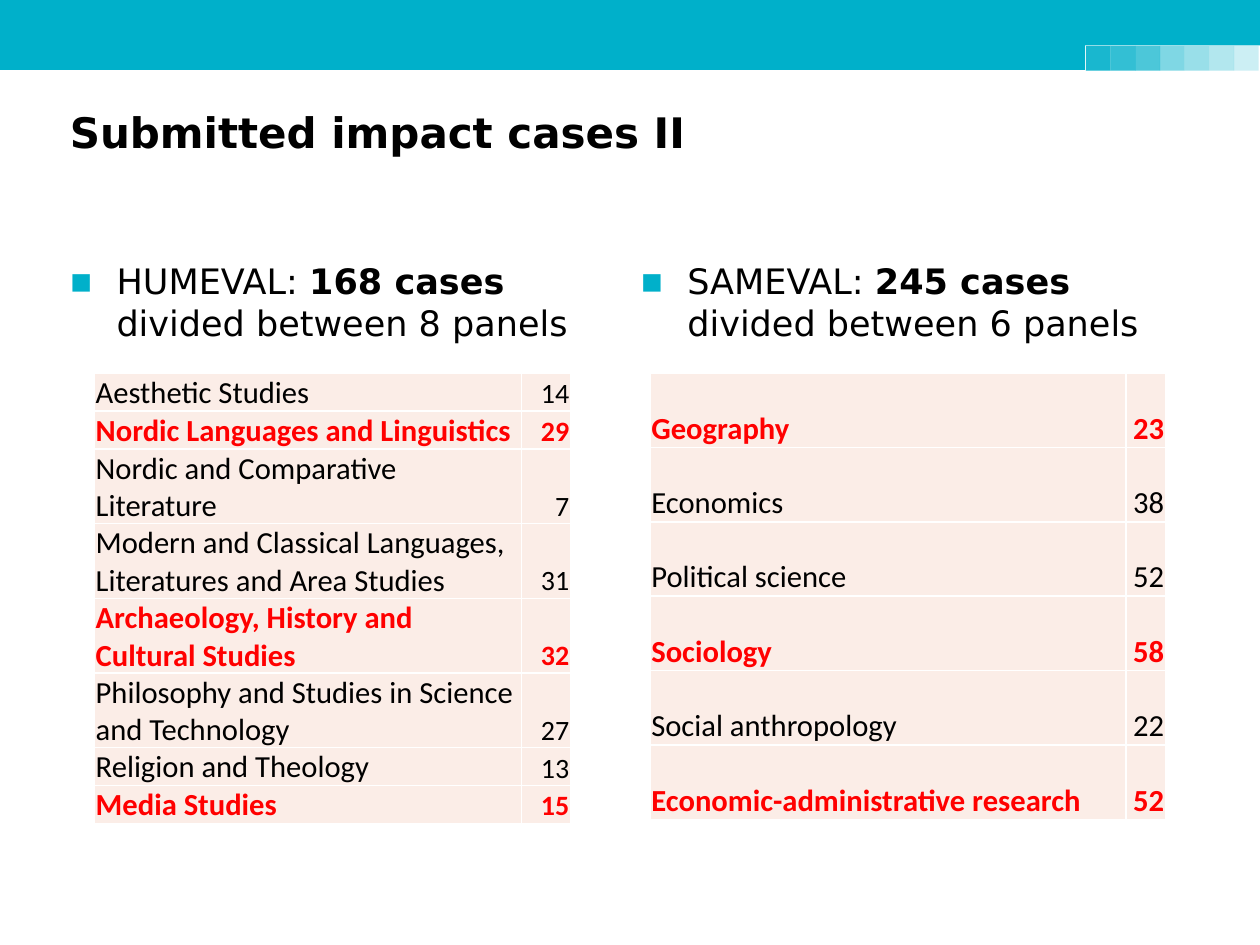
"""Build the slide on submitted impact cases, with one table per evaluation."""
from dataclasses import dataclass

from lxml.etree import SubElement
from pptx import Presentation
from pptx.dml.color import RGBColor
from pptx.enum.shapes import MSO_SHAPE
from pptx.enum.text import MSO_ANCHOR, PP_ALIGN
from pptx.oxml.ns import qn
from pptx.util import Pt


@dataclass(frozen=True)
class Theme:
    teal: str = "00B0CA"
    black: str = "000000"
    red: str = "FF0000"
    white: str = "FFFFFF"
    blush: str = "FBEDE7"
    head: str = "DejaVu Sans"
    grid: str = "Calibri"
    title: float = 24
    body: float = 20
    cell: float = 17.5
    small: float = 16


theme = Theme()


def style(font, name, size, color, bold=False):
    font.name, font.size, font.bold = name, Pt(size), bold
    font.color.rgb = RGBColor.from_string(color)


def add_box(left, top, width, height, inset):
    frame = slide.shapes.add_textbox(Pt(left), Pt(top), Pt(width), Pt(height)).text_frame
    frame.word_wrap = True
    frame.margin_left, frame.margin_right = Pt(inset), Pt(3)
    frame.margin_top = frame.margin_bottom = Pt(3)
    return frame


prs = Presentation()
prs.slide_width, prs.slide_height = Pt(720), Pt(540)
slide = prs.slides.add_slide(prs.slide_layouts[6])

path = slide.shapes.build_freeform(0, 0, scale=Pt(1))
path.add_line_segments([(720, 0), (720, 26.5), (620.5, 26.5), (620.5, 40), (0, 40)])
band = path.convert_to_shape()
band.shadow.inherit = False
band.fill.solid()
band.fill.fore_color.rgb = RGBColor.from_string(theme.teal)
band.line.fill.background()

for i, alpha in enumerate([90, 80, 70, 50, 40, 30, 20]):
    tile = slide.shapes.add_shape(
        MSO_SHAPE.RECTANGLE, Pt(620.5 + 14.1 * i), Pt(26.2), Pt(14.2), Pt(14.2))
    tile.shadow.inherit = False
    tile.fill.solid()
    tile.fill.fore_color.rgb = RGBColor.from_string(theme.teal)
    tile.line.fill.background()
    tint = tile.fill._xPr.find(qn("a:solidFill"))[0]
    SubElement(tint, qn("a:alpha"), val=str(alpha * 1000))

title = add_box(36.9, 57.6, 657, 85, 3)
title.text = "Submitted impact cases II"
style(title.paragraphs[0].runs[0].font, theme.head, theme.title, theme.black, True)

leads = [
    (39.6, 314.6, "HUMEVAL: ", "168 cases ", "divided between 8 panels"),
    (365.8, 328.3, "SAMEVAL: ", "245 cases ", "divided between 6 panels"),
]
for left, width, *parts in leads:
    para = add_box(left, 145.4, width, 374.4, 0).paragraphs[0]
    props = para._p.get_or_add_pPr()
    props.set("marL", str(Pt(27)))
    props.set("indent", str(Pt(-27)))
    SubElement(SubElement(props, qn("a:buClr")), qn("a:srgbClr"), val=theme.teal)
    SubElement(props, qn("a:buFont"), typeface=theme.head)
    SubElement(props, qn("a:buChar"), char="▪")
    for i, part in enumerate(parts):
        run = para.add_run()
        run.text = part
        style(run.font, theme.head, theme.body, theme.black, i == 1)

human = [
    ("Aesthetic Studies", 14, False),
    ("Nordic Languages and Linguistics", 29, True),
    ("Nordic and Comparative Literature", 7, False),
    ("Modern and Classical Languages, Literatures and Area Studies", 31, False),
    ("Archaeology, History and Cultural Studies", 32, True),
    ("Philosophy and Studies in Science and Technology", 27, False),
    ("Religion and Theology", 13, False),
    ("Media Studies", 15, True),
]
social = [
    ("Geography", 23, True),
    ("Economics", 38, False),
    ("Political science", 52, False),
    ("Sociology", 58, True),
    ("Social anthropology", 22, False),
    ("Economic-administrative research", 52, True),
]
tables = [
    (54, (244, 28), 15.8, theme.small, human),
    (371.5, (272, 22.5), 42.5, theme.cell, social),
]
for left, widths, height, size, rows in tables:
    table = slide.shapes.add_table(
        len(rows), 2, Pt(left), Pt(213.2), Pt(sum(widths)), Pt(height * len(rows))).table
    table.first_row = table.horz_banding = False
    for col, width in zip(table.columns, widths):
        col.width = Pt(width)
    for row, (name, count, bold) in zip(table.rows, rows):
        row.height = Pt(height)
        texts = [(name, theme.cell, PP_ALIGN.LEFT), (str(count), size, PP_ALIGN.RIGHT)]
        for cell, (text, points, align) in zip(row.cells, texts):
            cell.text_frame.text = text
            para = cell.text_frame.paragraphs[0]
            para.alignment = align
            color = theme.red if bold else theme.black
            style(para.runs[0].font, theme.grid, points, color, bold)
            cell.vertical_anchor = MSO_ANCHOR.BOTTOM
            cell.margin_left = cell.margin_right = cell.margin_top = Pt(0.7)
            cell.margin_bottom = 0
            props = cell._tc.get_or_add_tcPr()
            for side in ("lnL", "lnR", "lnT", "lnB"):
                edge = SubElement(props, qn(f"a:{side}"), w=str(Pt(1)))
                fill = SubElement(edge, qn("a:solidFill"))
                SubElement(fill, qn("a:srgbClr"), val=theme.white)
            cell.fill.solid()
            cell.fill.fore_color.rgb = RGBColor.from_string(theme.blush)

prs.save("out.pptx")
